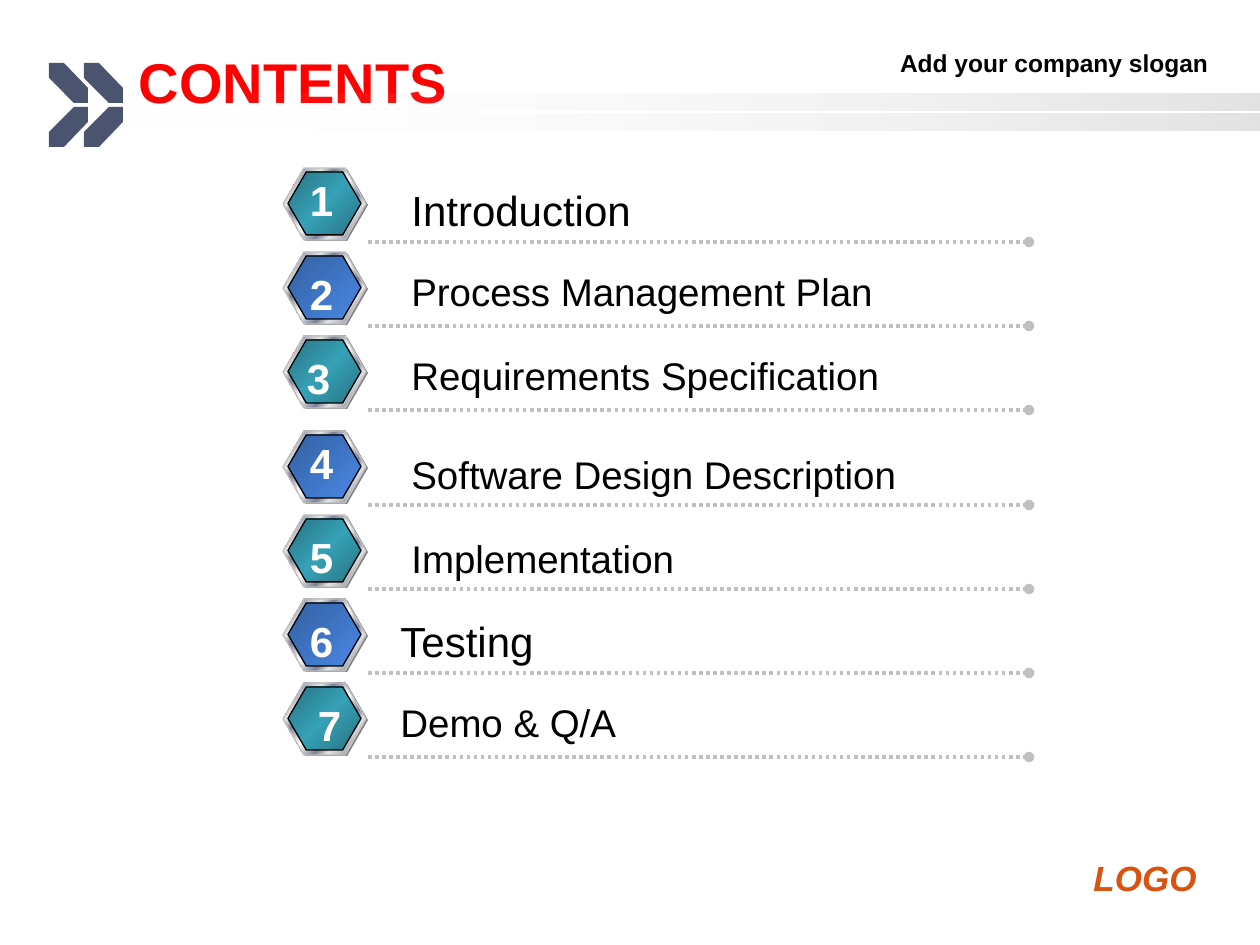
"""Build a contents slide with seven numbered hexagon rows."""
from dataclasses import dataclass

from pptx import Presentation, util as u
from pptx.dml.color import RGBColor
from pptx.enum import dml, shapes, text
from pptx.oxml import parse_xml
from pptx.oxml.ns import nsdecls, qn

UNIT = 914400 / 126


@dataclass(frozen=True)
class Theme:
    face: str = "Arial"
    ink: str = "000000"
    white: str = "FFFFFF"
    title: str = "FF0000"
    logo: str = "D9520F"
    mark: str = "4B546F"
    rule: str = "C0C0C0"
    shade: str = "808080"
    bar: tuple = ((0, "FFFFFF", 0), (100, "969696", 27))
    teal: tuple = ((0, "277382"), (50, "36A1B6"), (100, "277382"))
    blue: tuple = ((0, "3461A2"), (100, "4987E3"))
    light: str = "E6E6E6"
    steel: str = "7D8496"
    head: int = 32
    large: int = 24
    body: int = 22
    brand: int = 20
    small: int = 14

    @property
    def rim(self):
        half = [(0, self.light), (7, self.steel), (26, self.light),
                (34, self.steel), (46, self.light)]
        back = [(100 - pos, tone) for pos, tone in reversed(half)]
        return (*half, (50, self.white), *back)


T = Theme()

ROWS = [
    ("Introduction", T.large, 399, 10, 599, 297, 0),
    ("Process Management Plan", T.body, 399, 10, 703, 297, 10),
    ("Requirements Specification", T.body, 399, 10, 724, 294, 10),
    ("Software Design Description", T.body, 399, 14, 599, 297, 0),
    ("Implementation", T.body, 399, 14, 599, 297, 10),
    ("Testing", T.large, 388, 10, 599, 297, 10),
    ("Demo & Q/A", T.body, 388, 10, 599, 305, 10),
]


def px(*vals):
    return [u.Emu(round(val * UNIT)) for val in vals]


def rgb(tone):
    return RGBColor.from_string(tone)


def blend(shape, stops, angle):
    shape.fill.background()
    marks = ""
    for pos, tone, *clear in stops:
        alpha = f'<a:alpha val="{clear[0] * 1000}"/>' if clear else ""
        marks += (f'<a:gs pos="{pos * 1000}"><a:srgbClr val="{tone}">'
                  f'{alpha}</a:srgbClr></a:gs>')
    grad = parse_xml(
        f'<a:gradFill {nsdecls("a")} rotWithShape="1"><a:gsLst>{marks}</a:gsLst>'
        f'<a:lin ang="{angle * 60000}" scaled="0"/></a:gradFill>')
    props = shape._element.spPr
    props.replace(props.find(qn("a:noFill")), grad)


def paint(shape, fill, line=None, angle=0):
    shape.shadow.inherit = False
    if isinstance(fill, str):
        shape.fill.solid()
        shape.fill.fore_color.rgb = rgb(fill)
    else:
        blend(shape, fill, angle)
    if line:
        shape.line.color.rgb = rgb(line)
        shape.line.width = u.Pt(0.75)
    else:
        shape.line.fill.background()


def style(para, size, tone, bold=False, italic=False, align=text.PP_ALIGN.LEFT):
    para.alignment = align
    font = para.font
    font.name, font.size = T.face, u.Pt(size)
    font.bold, font.italic = bold, italic
    font.color.rgb = rgb(tone)


def label(slide, words, box, size, tone, wrap=True, **look):
    frame = slide.shapes.add_textbox(*px(*box)).text_frame
    frame.word_wrap = wrap
    frame.auto_size = text.MSO_AUTO_SIZE.SHAPE_TO_FIT_TEXT
    para = frame.paragraphs[0]
    para.text = words
    style(para, size, tone, **look)
    return para


def title(slide, words):
    shape = slide.shapes.title
    shape.left, shape.top, shape.width, shape.height = px(126, 42, 1040, 78)
    frame = shape.text_frame
    frame.text = words
    frame.vertical_anchor = text.MSO_ANCHOR.MIDDLE
    style(frame.paragraphs[0], T.head, T.title, bold=True)


def bars(slide):
    for top in (94, 114):
        bar = slide.shapes.add_shape(
            shapes.MSO_SHAPE.RECTANGLE, *px(95, top, 1165, 17))
        paint(bar, T.bar)


def mark(slide):
    upper = [(49, 63), (49, 78), (74, 103), (88, 103), (88, 88), (64, 63)]
    lower = [(x, 210 - y) for x, y in upper]
    for shift in (0, 35):
        for part in (upper, lower):
            first, *rest = [(x + shift, y) for x, y in part]
            pen = slide.shapes.build_freeform(*first, scale=UNIT)
            pen.add_line_segments(rest, close=True)
            paint(pen.convert_to_shape(), T.mark)


def badge(slide, top, stops):
    group = slide.shapes.add_group_shape()
    layers = [
        ((285, top + 1, 83, 72), T.shade, None),
        ((283, top, 83, 72), T.rim, T.rule),
        ((288, top + 4, 73, 63), stops, T.ink),
    ]
    for box, fill, line in layers:
        shape = group.shapes.add_shape(shapes.MSO_SHAPE.HEXAGON, *px(*box))
        shape.adjustments[0] = 0.29
        paint(shape, fill, line, 45)


def rule(slide, y):
    link = slide.shapes.add_connector(
        shapes.MSO_CONNECTOR.STRAIGHT, *px(368, y, 1029, y))
    link.line.color.rgb = rgb(T.rule)
    link.line.width = u.Pt(2)
    link.line.dash_style = dml.MSO_LINE.ROUND_DOT
    props = link._element.spPr
    props.find(qn("a:ln")).append(
        parse_xml(f'<a:tailEnd {nsdecls("a")} type="oval"/>'))
    props.append(parse_xml(f'<a:effectLst {nsdecls("a")}/>'))


def row(slide, index, item):
    words, size, left, drop, width, spot, dip = item
    top = 168 + 84 * index + (11 if index > 2 else 0)
    badge(slide, top, T.blue if index % 2 else T.teal)
    rule(slide, top + 74)
    label(slide, words, (left, top + drop, width, 63 if size == T.large else 59),
          size, T.ink)
    label(slide, str(index + 1), (spot, top + dip, 49, 63), T.large, T.white,
          wrap=False, bold=True, align=text.PP_ALIGN.CENTER)


def logo(slide):
    para = label(slide, "LOGO", (1081, 850, 147, 54), T.brand, T.logo,
                 bold=True, italic=True)
    para.runs[0]._r.get_or_add_rPr().append(parse_xml(
        f'<a:effectLst {nsdecls("a")}><a:outerShdw dist="35921" dir="2700000">'
        f'<a:srgbClr val="{T.shade}"/></a:outerShdw></a:effectLst>'))


def main():
    deck = Presentation()
    deck.slide_width, deck.slide_height = px(1260, 945)
    slide = deck.slides.add_slide(deck.slide_layouts[5])
    bars(slide)
    mark(slide)
    label(slide, "Add your company slogan", (462, 42, 759, 42), T.small, T.ink,
          bold=True, align=text.PP_ALIGN.RIGHT)
    logo(slide)
    title(slide, "CONTENTS")
    for index, item in enumerate(ROWS):
        row(slide, index, item)
    deck.save("out.pptx")


if __name__ == "__main__":
    main()
